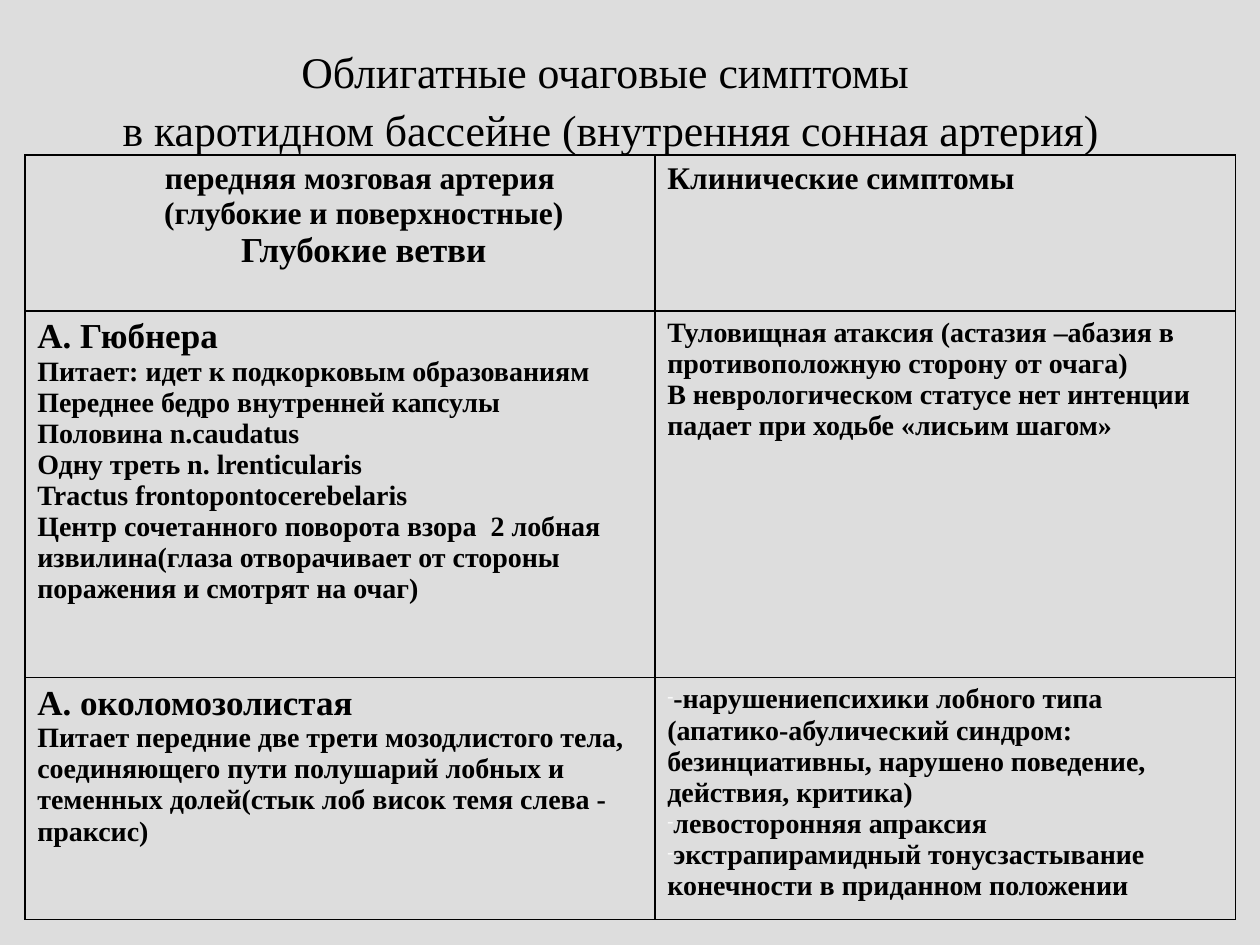
from lxml.etree import SubElement
from pptx import Presentation
from pptx.dml.color import RGBColor
from pptx.enum.text import MSO_ANCHOR, MSO_AUTO_SIZE, PP_ALIGN as Align
from pptx.oxml.ns import qn
from pptx.util import Cm, Pt

COLORS = {"background": "DDDDDD", "ink": "000000", "bullet": "F9F9F9"}
FONT = "Times New Roman"
TITLE = ["Облигатные очаговые симптомы ",
         "в каротидном бассейне (внутренняя сонная артерия)"]

# Each cell: paragraph style, then (text, size) paragraphs
ROWS = [
    [("heading", [("передняя мозговая артерия ", 18),
                  ("(глубокие и поверхностные)", 18),
                  ("Глубокие ветви", 20)]),
     ("justified", [("Клинические симптомы", 18)])],
    [("plain", [("А. Гюбнера", 20),
                ("Питает: идет к подкорковым образованиям", 16),
                ("Переднее бедро внутренней капсулы", 16),
                ("Половина n.caudatus", 16),
                ("Одну треть n. lrenticularis", 16),
                ("Tractus frontopontocerebelaris", 16),
                ("Центр сочетанного поворота взора  2 лобная извилина"
                 "(глаза отворачивает от стороны поражения и смотрят на очаг)", 16)]),
     ("plain", [("Туловищная атаксия (астазия –абазия в противоположную "
                 "сторону от очага)", 16),
                ("В неврологическом статусе нет интенции падает при ходьбе "
                 "«лисьим шагом»", 16)])],
    [("plain", [("А. околомозолистая", 20),
                ("Питает передние две трети мозодлистого тела, соединяющего "
                 "пути полушарий лобных и теменных долей(стык лоб висок темя "
                 "слева - праксис)", 16)]),
     ("bulleted", [("-нарушениепсихики лобного типа (апатико-абулический синдром: "
                    "безинциативны, нарушено поведение, действия, критика)", 16),
                   ("левосторонняя апраксия", 16),
                   ("экстрапирамидный тонусзастывание конечности в приданном "
                    "положении", 16)])],
]
COLUMN_WIDTHS = [12.7, 11.71]
ROW_HEIGHTS = [3.15, 7.39, 4.88]
ALIGNMENTS = {"heading": Align.CENTER, "justified": Align.JUSTIFY}


def add_run(paragraph, text, size, bold):
    run = paragraph.add_run()
    run.text = text
    run.font.name, run.font.size, run.font.bold = FONT, Pt(size), bold
    run.font.color.rgb = RGBColor.from_string(COLORS["ink"])


def add_bullet(paragraph):
    props = paragraph._p.get_or_add_pPr()
    color = SubElement(props, qn("a:buClr"))
    SubElement(color, qn("a:srgbClr"), val=COLORS["bullet"])
    SubElement(props, qn("a:buSzPct"), val="65000")
    SubElement(props, qn("a:buChar"), char="-")


def add_borders(cell):
    props = cell._tc.get_or_add_tcPr()
    for side in "LRTB":
        line = SubElement(props, qn(f"a:ln{side}"), w=str(Pt(1)))
        fill = SubElement(line, qn("a:solidFill"))
        SubElement(fill, qn("a:srgbClr"), val=COLORS["ink"])


def fill_cell(cell, style, paragraphs):
    add_borders(cell)
    cell.fill.background()
    for index, (text, size) in enumerate(paragraphs):
        frame = cell.text_frame
        paragraph = frame.add_paragraph() if index else frame.paragraphs[0]
        paragraph.alignment = ALIGNMENTS.get(style, Align.LEFT)
        if style == "heading":
            paragraph._p.get_or_add_pPr().set("indent", str(Cm(0.97)))
        if style == "bulleted":
            add_bullet(paragraph)
        add_run(paragraph, text, size, True)


def add_title(slide):
    title = slide.shapes.title
    title.left, title.top, title.width, title.height = Cm(0.5), Cm(0), Cm(23.62), Cm(3.94)
    frame = title.text_frame
    frame.word_wrap, frame.auto_size = True, MSO_AUTO_SIZE.NONE
    frame.vertical_anchor = MSO_ANCHOR.MIDDLE
    paragraph = frame.paragraphs[0]
    paragraph.alignment, paragraph.line_spacing = Align.CENTER, 1.1
    for index, line in enumerate(TITLE):
        if index:
            paragraph.add_line_break()
        add_run(paragraph, line, 25, False)


def add_symptom_table(slide):
    table = slide.shapes.add_table(
        len(ROWS), len(COLUMN_WIDTHS), Cm(0.5), Cm(3.12),
        Cm(sum(COLUMN_WIDTHS)), Cm(sum(ROW_HEIGHTS))).table
    table.first_row = table.horz_banding = False
    for column, width in zip(table.columns, COLUMN_WIDTHS):
        column.width = Cm(width)
    for row, height, contents in zip(table.rows, ROW_HEIGHTS, ROWS):
        row.height = Cm(height)
        for cell, (style, paragraphs) in zip(row.cells, contents):
            fill_cell(cell, style, paragraphs)


def main():
    deck = Presentation()
    deck.slide_width, deck.slide_height = Cm(25.4), Cm(19.05)
    slide = deck.slides.add_slide(deck.slide_layouts[5])
    background = slide.background.fill
    background.solid()
    background.fore_color.rgb = RGBColor.from_string(COLORS["background"])
    add_title(slide)
    add_symptom_table(slide)
    deck.save("out.pptx")


if __name__ == "__main__":
    main()
